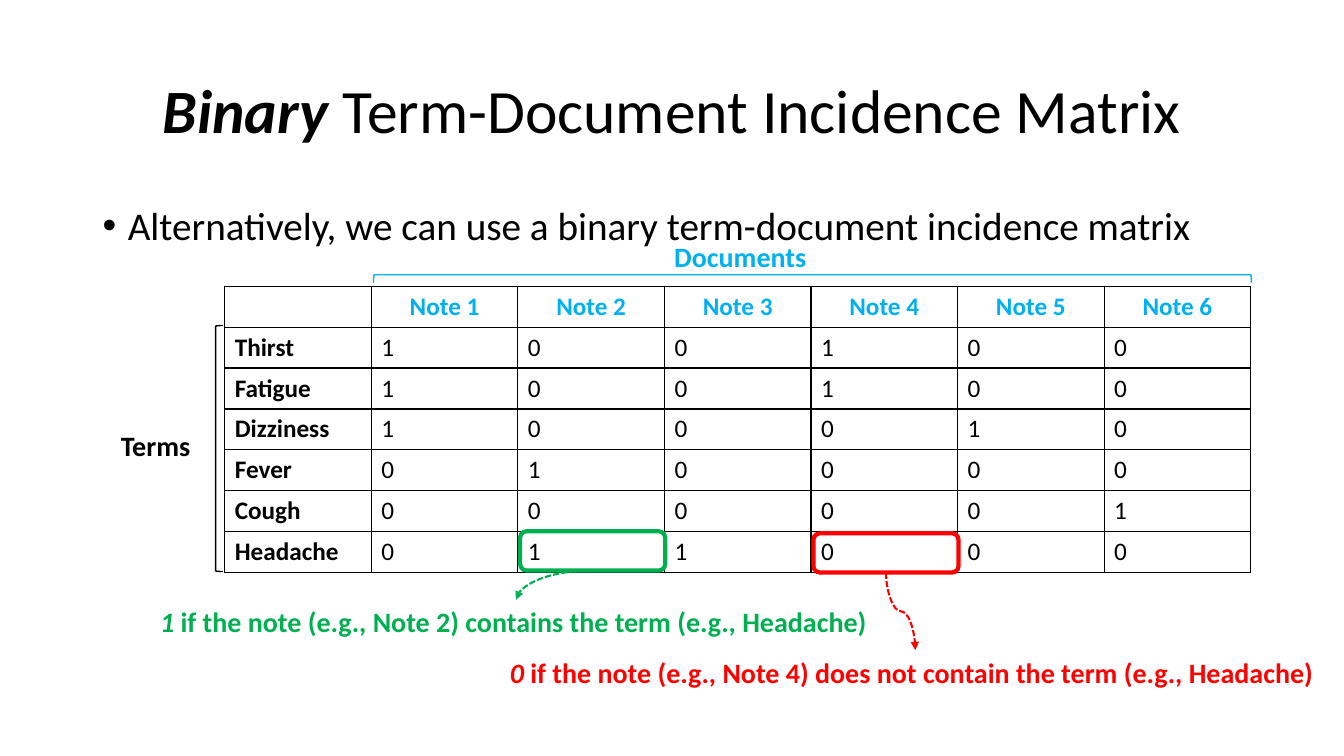
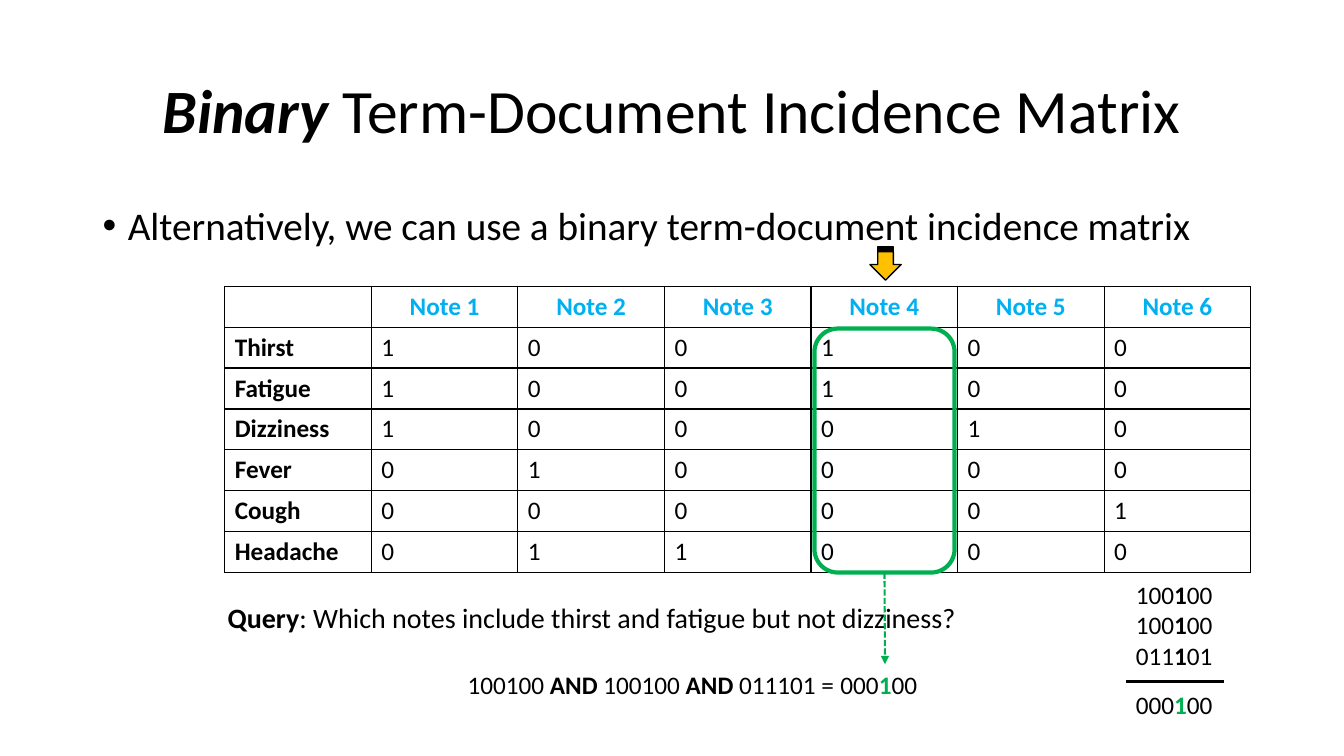
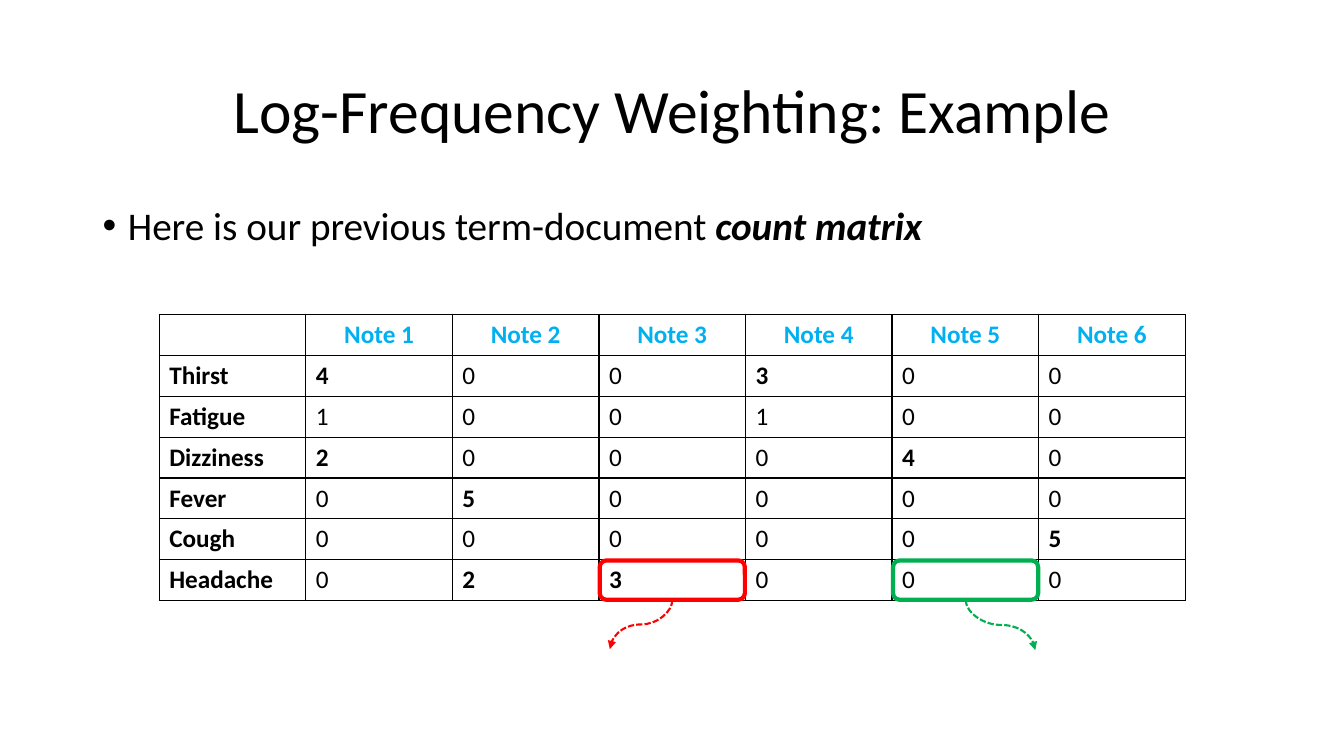
"""Build three slides on binary and count term-document matrices."""
from lxml.etree import SubElement
from pptx import Presentation
from pptx.dml.color import RGBColor
from pptx.enum.dml import MSO_LINE
from pptx.enum.shapes import MSO_CONNECTOR as Link, MSO_SHAPE as Shape
from pptx.enum.text import MSO_ANCHOR as Anchor, MSO_AUTO_SIZE as Fit, PP_ALIGN as Align
from pptx.oxml.ns import qn
from pptx.util import Pt

PX = 9144
FONT = "Calibri"
COLORS = {"black": "000000", "blue": "00B0F0", "green": "00B050",
          "red": "FF0000", "amber": "FFC000"}

TITLE_AREA = (92, 40, 1150, 145)
BODY_AREA = (92, 200, 1172, 510)
TABLE_SIZE = (1018, 284)
BINARY_TABLE = (223, 284)
COUNT_TABLE = (158, 312)
CELL_BOX = (144, 39)

BINARY_TITLE = [("Binary", "bi"), (" Term-Document Incidence Matrix", "")]
BINARY_BODY = [("Alternatively, we can use a binary term-document incidence matrix", "")]
COUNT_TITLE = [("Log-Frequency Weighting: Example", "")]
COUNT_BODY = [("Here is our previous term-document ", ""), ("count matrix", "bi")]

NOTES = [f"Note {number}" for number in range(1, 7)]
COUNTS = {
    "Thirst": [4, 0, 0, 3, 0, 0],
    "Fatigue": [1, 0, 0, 1, 0, 0],
    "Dizziness": [2, 0, 0, 0, 4, 0],
    "Fever": [0, 5, 0, 0, 0, 0],
    "Cough": [0, 0, 0, 0, 0, 5],
    "Headache": [0, 2, 3, 0, 0, 0],
}
BINARY = {term: [min(count, 1) for count in row] for term, row in COUNTS.items()}

MATRIX_LABELS = [
    ((110, 420, 90, 44), "black", [("Terms", "b")]),
    ((659, 233, 152, 44), "blue", [("Documents", "b")]),
    ((496, 645, 824, 44), "red",
     [("0", "bi"), (" if the note (e.g., Note 4) does not contain the term (e.g., Headache)", "b")]),
    ((149, 595, 727, 44), "green",
     [("1", "bi"), (" if the note (e.g., Note 2) contains the term (e.g., Headache)", "b")]),
]
QUERY = [("Query", "b"), (": Which notes include thirst and fatigue but not dizziness?", "")]
EXPRESSION = [("100100 ", ""), ("AND ", "b"), ("100100 ", ""), ("AND ", "b"), ("011101 =", "")]
VECTORS = [[("100", ""), ("1", "b"), ("00", "")],
           [("100", ""), ("1", "b"), ("00", "")],
           [("011", ""), ("1", "b"), ("01", "")]]
ANSWER = [("000", ""), ("1", "b", "green"), ("00", "")]
QUERY_TEXTS = [
    ((216, 591, 750, 44), 20, [QUERY]),
    ((454, 659, 388, 40), 18, [EXPRESSION]),
    ((1117, 570, 97, 162), 18, VECTORS),
    ((1117, 679, 97, 40), 18, [ANSWER]),
    ((824, 659, 97, 40), 18, [ANSWER]),
]


def px(*lengths):
    return [round(length * PX) for length in lengths]


def rgb(name):
    return RGBColor.from_string(COLORS[name])


def write(frame, paragraphs, size=18, color="black", align=Align.LEFT, spacing=None):
    for index, spans in enumerate(paragraphs):
        para = frame.add_paragraph() if index else frame.paragraphs[0]
        para.alignment = align
        para.line_spacing = spacing
        for text, style, *tint in spans:
            span = para.add_run()
            span.text = text
            font = span.font
            font.name, font.size = FONT, Pt(size)
            font.bold, font.italic = "b" in style, "i" in style
            font.color.rgb = rgb(tint[0] if tint else color)


def add_text(page, area, paragraphs, **look):
    frame = page.shapes.add_textbox(*px(*area)).text_frame
    frame.word_wrap = False
    frame.auto_size = Fit.SHAPE_TO_FIT_TEXT
    write(frame, paragraphs, **look)


def add_page(deck, title, body):
    page = deck.slides.add_slide(deck.slide_layouts[5])
    box = page.shapes.title
    box.left, box.top, box.width, box.height = px(*TITLE_AREA)
    frame = box.text_frame
    frame.auto_size, frame.vertical_anchor = Fit.NONE, Anchor.MIDDLE
    write(frame, [title], size=44, align=Align.CENTER, spacing=0.9)

    frame = page.shapes.add_textbox(*px(*BODY_AREA)).text_frame
    frame.word_wrap = True
    write(frame, [body], size=28, spacing=0.9)
    para = frame.paragraphs[0]
    para.space_before = Pt(10)
    props = para._p.get_or_add_pPr()
    props.set("marL", str(25 * PX))
    props.set("indent", str(-25 * PX))
    SubElement(props, qn("a:buFont"), typeface="Arial")
    SubElement(props, qn("a:buChar"), char="•")
    return page


def format_cell(cell):
    props = cell._tc.get_or_add_tcPr()
    for side in ("lnL", "lnR", "lnT", "lnB"):
        edge = SubElement(props, qn(f"a:{side}"), w=str(Pt(1)))
        fill = SubElement(edge, qn("a:solidFill"))
        SubElement(fill, qn("a:srgbClr"), val=COLORS["black"])
    cell.fill.background()


def add_matrix(page, corner, matrix):
    rows = [["", *NOTES]] + [[term, *values] for term, values in matrix.items()]
    table = page.shapes.add_table(len(rows), len(rows[0]), *px(*corner, *TABLE_SIZE)).table
    table.first_row = table.horz_banding = False
    for column in table.columns:
        column.width, = px(TABLE_SIZE[0] / len(rows[0]))
    for row_index, values in enumerate(rows):
        table.rows[row_index].height, = px(TABLE_SIZE[1] / len(rows))
        for column_index, value in enumerate(values):
            cell = table.cell(row_index, column_index)
            format_cell(cell)
            header = row_index == 0
            bold = isinstance(value, str) or value > 1
            if value != "":
                write(cell.text_frame, [[(str(value), "b" if bold else "")]],
                      color="blue" if header else "black",
                      align=Align.CENTER if header else Align.LEFT)


def add_outline(page, kind, area, color, weight=1, fill=None, turn=0):
    box = page.shapes.add_shape(kind, *px(*area))
    box.shadow.inherit = False
    box.rotation = turn
    box.line.color.rgb, box.line.width = rgb(color), Pt(weight)
    if fill:
        box.fill.solid()
        box.fill.fore_color.rgb = rgb(fill)
    else:
        box.fill.background()
    return box


def add_line(page, kind, start, end, color, weight=1.5, arrow=True):
    line = page.shapes.add_connector(kind, *px(*start, *end))
    line.line.color.rgb, line.line.width = rgb(color), Pt(weight)
    if arrow:
        line.line.dash_style = MSO_LINE.SQUARE_DOT
        SubElement(line.line._get_or_add_ln(), qn("a:tailEnd"), type="triangle")
    SubElement(line._element.spPr, qn("a:effectLst"))
    return line


def add_drop_curve(page, start, end, color):
    """Draw an S-curve that leaves and arrives vertically."""
    across, down = end[0] - start[0], end[1] - start[1]
    middle_x, middle_y = start[0] + across / 2, start[1] + down / 2
    half_width = down / 2 if across < 0 else -down / 2
    half_height = abs(across) / 2
    line = add_line(page, Link.CURVE, (middle_x - half_width, middle_y - half_height),
                    (middle_x + half_width, middle_y + half_height), color)
    line._element.spPr.xfrm.set("rot", str((90 if across < 0 else 270) * 60000))


def add_cell_box(page, corner, color):
    add_outline(page, Shape.ROUNDED_RECTANGLE, (*corner, *CELL_BOX), color, weight=3)
    return corner[0] + CELL_BOX[0] / 2, corner[1] + CELL_BOX[1]


def build_matrix_page(deck):
    page = add_page(deck, BINARY_TITLE, BINARY_BODY)
    add_matrix(page, BINARY_TABLE, BINARY)
    add_outline(page, Shape.LEFT_BRACKET, (214, 323, 7, 244), "black")
    add_outline(page, Shape.RIGHT_BRACKET, (802, -159, 8, 871), "blue", turn=270)
    for area, color, spans in MATRIX_LABELS:
        add_text(page, area, [spans], size=20, color=color)
    add_drop_curve(page, add_cell_box(page, (807, 529), "red"), (908, 645), "red")
    start = add_cell_box(page, (516, 527), "green")
    bend = add_line(page, Link.CURVE, start, (512, 595), "green")
    bend._element.spPr.prstGeom.set("prst", "curvedConnector2")


def build_query_page(deck):
    page = add_page(deck, BINARY_TITLE, BINARY_BODY)
    add_matrix(page, BINARY_TABLE, BINARY)
    for area, size, paragraphs in QUERY_TEXTS:
        add_text(page, area, paragraphs, size=size)
    add_line(page, Link.STRAIGHT, (1214, 676), (1117, 676), "black", weight=2.25, arrow=False)
    column = add_outline(page, Shape.ROUNDED_RECTANGLE, (808, 326, 139, 242), "green", weight=3)
    arrow = add_line(page, Link.STRAIGHT, (878, 568), (878, 659), "green")
    arrow.begin_connect(column, 2)
    add_outline(page, Shape.STRIPED_RIGHT_ARROW, (862, 246, 33, 31), "black", fill="amber", turn=90)


def build_count_page(deck):
    page = add_page(deck, COUNT_TITLE, COUNT_BODY)
    add_matrix(page, COUNT_TABLE, COUNTS)
    for corner, end, color in [((595, 556), (605, 644), "red"),
                               ((886, 556), (1027, 645), "green")]:
        add_drop_curve(page, add_cell_box(page, corner, color), end, color)


def main():
    deck = Presentation()
    deck.slide_width, deck.slide_height = px(1333.33, 750)
    build_matrix_page(deck)
    build_query_page(deck)
    build_count_page(deck)
    deck.save("out.pptx")


if __name__ == "__main__":
    main()
